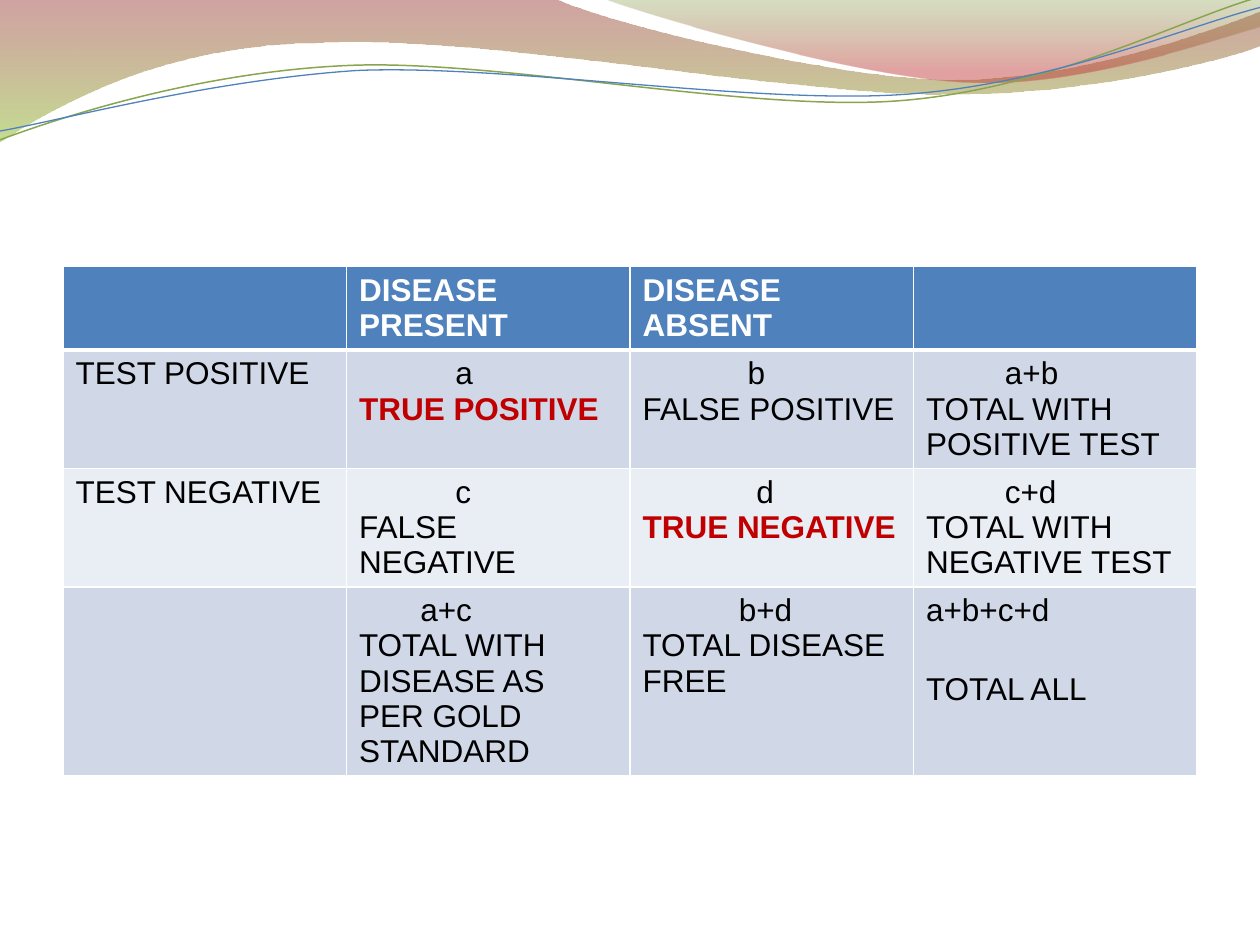
"""Builds a slide with a diagnostic test table under a wave header."""
import math

import pptx
import pptx.dml.color
import pptx.oxml
import pptx.oxml.ns
import pptx.util

Pt = pptx.util.Pt
FONT, SIZE = "Arial", 18
BLACK, WHITE, RED, BLUE = "000000", "FFFFFF", "C00000", "4F81BD"
BAND_FILLS = ["D0D8E8", "E9EDF4"]

# Each wave: a start point, then segments of one point (line) or three (curve).
FILLED_WAVES = [
    {"start": (0, -0.7),
     "segments": [[(317.4, -0.7)],
                  [(342.7, 12.2), (478, 45.4), (545.8, 45.4)],
                  [(614.2, 45.4), (689.8, 18.7), (720, 6.5)],
                  [(720.7, 26)],
                  [(707.8, 31.7), (626.4, 54.7), (537.1, 54)],
                  [(447.8, 54), (275, 20.2), (185, 24.5)],
                  [(92.9, 25.2), (33.1, 59.8), (-0.7, 81.4)]],
     "stops": [(0, "973330", 45), (1, "95C238", 55)]},
    {"start": (344.9, -0.7),
     "segments": [[(366.5, 7.9), (491, 44.6), (553.7, 46.8)],
                  [(616.3, 49.7), (691.9, 23), (720, 15.1)],
                  [(720, 0)]],
     "stops": [(0, "769537", 30), (0.8, "BE3330", 45)]},
]
LINE_WAVES = [
    {"start": (0, 79.9),
     "segments": [[(34.6, 67), (113.8, 41), (199.4, 37.4)],
                  [(284.4, 33.8), (427, 64.1), (513.4, 57.6)],
                  [(599.8, 51.1), (675.4, 10.8), (718.6, -1.4)]],
     "center": (359.3, 41.4), "color": "89A54F", "width": 0.85},
    {"start": (0, 74.9),
     "segments": [[(33.8, 69.1), (118.1, 46.1), (203.8, 40.3)],
                  [(290.2, 36.7), (429.8, 59.8), (516.2, 54)],
                  [(601.9, 48.2), (677.5, 15.1), (720, 4.3)]],
     "center": (359.6, 42.5), "color": BLUE, "width": 0.75},
]
LINE_TILT = -2.7

HEADER = [[], ["DISEASE PRESENT"], ["DISEASE", "ABSENT"], []]
# Each body cell: symbol, its indent, description.
BODY = [
    [("TEST POSITIVE", 0, ""), ("a", 55, "TRUE POSITIVE"),
     ("b", 60, "FALSE POSITIVE"), ("a+b", 45, "TOTAL WITH POSITIVE TEST")],
    [("TEST NEGATIVE", 0, ""), ("c", 55, "FALSE NEGATIVE"),
     ("d", 65, "TRUE NEGATIVE"), ("c+d", 45, "TOTAL WITH NEGATIVE TEST")],
    [("", 0, ""), ("a+c", 35, "TOTAL WITH DISEASE AS PER GOLD STANDARD"),
     ("b+d", 55, "TOTAL DISEASE FREE"), ("a+b+c+d", 0, "TOTAL ALL")],
]
CORRECT_RESULTS = {"TRUE POSITIVE", "TRUE NEGATIVE"}
GAP_BEFORE = {"TOTAL ALL": 25}
TABLE_LEFT, TABLE_TOP, TABLE_HEIGHT = 36, 152.4, 309.6
COLUMN_WIDTH, ROW_HEIGHT = 162, 29.2


def rgb(value):
    return pptx.dml.color.RGBColor.from_string(value)


def turn(point, center, degrees):
    angle = math.radians(degrees)
    dx, dy = point[0] - center[0], point[1] - center[1]
    return (center[0] + dx * math.cos(angle) - dy * math.sin(angle),
            center[1] + dx * math.sin(angle) + dy * math.cos(angle))


def add_wave(slide, wave, tilt=0, close=False):
    segments = wave["segments"]
    points = [wave["start"], *(point for segment in segments for point in segment)]
    if tilt:
        points = [turn(point, wave["center"], -tilt) for point in points]
    start, *rest = [(Pt(x), Pt(y)) for x, y in points]
    builder = slide.shapes.build_freeform(*start)
    builder.add_line_segments(rest, close=close)
    shape = builder.convert_to_shape()
    shape.shadow.inherit = False
    shape.rotation = tilt % 360
    bend(shape, segments)
    return shape


def bend(shape, segments):
    """Joins the three points of each curved segment into one Bézier step."""
    qn = pptx.oxml.ns.qn
    steps = iter(shape.element.spPr.findall(".//" + qn("a:lnTo")))
    for segment in segments:
        first, *others = [next(steps) for _ in segment]
        if others:
            first.tag = qn("a:cubicBezTo")
            for step in others:
                first.append(step[0])
                step.getparent().remove(step)


def fill_gradient(shape, stops):
    shape.line.fill.background()
    shape.fill.gradient()
    shape.fill.gradient_angle = 270
    for stop, (position, color, _) in zip(shape.fill.gradient_stops, stops):
        stop.position = position
        stop.color.rgb = rgb(color)
    colors = shape.element.spPr.findall(".//" + pptx.oxml.ns.qn("a:srgbClr"))
    for element, (_, _, opacity) in zip(colors, stops):
        element.append(pptx.oxml.parse_xml(
            f'<a:alpha {pptx.oxml.ns.nsdecls("a")} val="{opacity * 1000}"/>'))


def write(frame, text, color=BLACK, bold=False, indent=0, before=0):
    paragraph = frame.paragraphs[0]
    if paragraph.runs:
        paragraph = frame.add_paragraph()
    if before:
        paragraph.space_before = Pt(before)
    if indent:
        paragraph._p.get_or_add_pPr().set("marL", str(Pt(indent)))
    run = paragraph.add_run()
    run.text = text
    run.font.name, run.font.size, run.font.bold = FONT, Pt(SIZE), bold
    run.font.color.rgb = rgb(color)


def style_cell(cell, fill, top=1, bottom=1):
    properties = cell._tc.get_or_add_tcPr()
    for side, width in {"L": 1, "R": 1, "T": top, "B": bottom}.items():
        properties.append(pptx.oxml.parse_xml(
            f'<a:ln{side} {pptx.oxml.ns.nsdecls("a")} w="{Pt(width)}"><a:solidFill>'
            f'<a:srgbClr val="{WHITE}"/></a:solidFill></a:ln{side}>'))
    cell.fill.solid()
    cell.fill.fore_color.rgb = rgb(fill)


def add_results_table(slide):
    columns = len(HEADER)
    frame = slide.shapes.add_table(
        len(BODY) + 1, columns, Pt(TABLE_LEFT), Pt(TABLE_TOP),
        Pt(COLUMN_WIDTH * columns), Pt(TABLE_HEIGHT))
    table = frame.table
    for row in table.rows:
        row.height = Pt(ROW_HEIGHT)
    frame.height = Pt(TABLE_HEIGHT)
    for column, headings in enumerate(HEADER):
        cell = table.cell(0, column)
        style_cell(cell, BLUE, bottom=3)
        for heading in headings:
            write(cell.text_frame, heading, color=WHITE, bold=True)
    for row, outcomes in enumerate(BODY, start=1):
        for column, (symbol, indent, description) in enumerate(outcomes):
            cell = table.cell(row, column)
            style_cell(cell, BAND_FILLS[(row - 1) % 2], top=3 if row == 1 else 1)
            if symbol:
                write(cell.text_frame, symbol, indent=indent)
            if description:
                correct = description in CORRECT_RESULTS
                write(cell.text_frame, description, color=RED if correct else BLACK,
                      bold=correct, before=GAP_BEFORE.get(description, 0))


def main():
    deck = pptx.Presentation()
    deck.slide_width, deck.slide_height = Pt(720), Pt(540)
    slide = deck.slides.add_slide(deck.slide_layouts[6])
    for wave in FILLED_WAVES:
        fill_gradient(add_wave(slide, wave, close=True), wave["stops"])
    for wave in LINE_WAVES:
        shape = add_wave(slide, wave, tilt=LINE_TILT)
        shape.fill.background()
        shape.line.color.rgb = rgb(wave["color"])
        shape.line.width = Pt(wave["width"])
    add_results_table(slide)
    deck.save("out.pptx")


if __name__ == "__main__":
    main()
